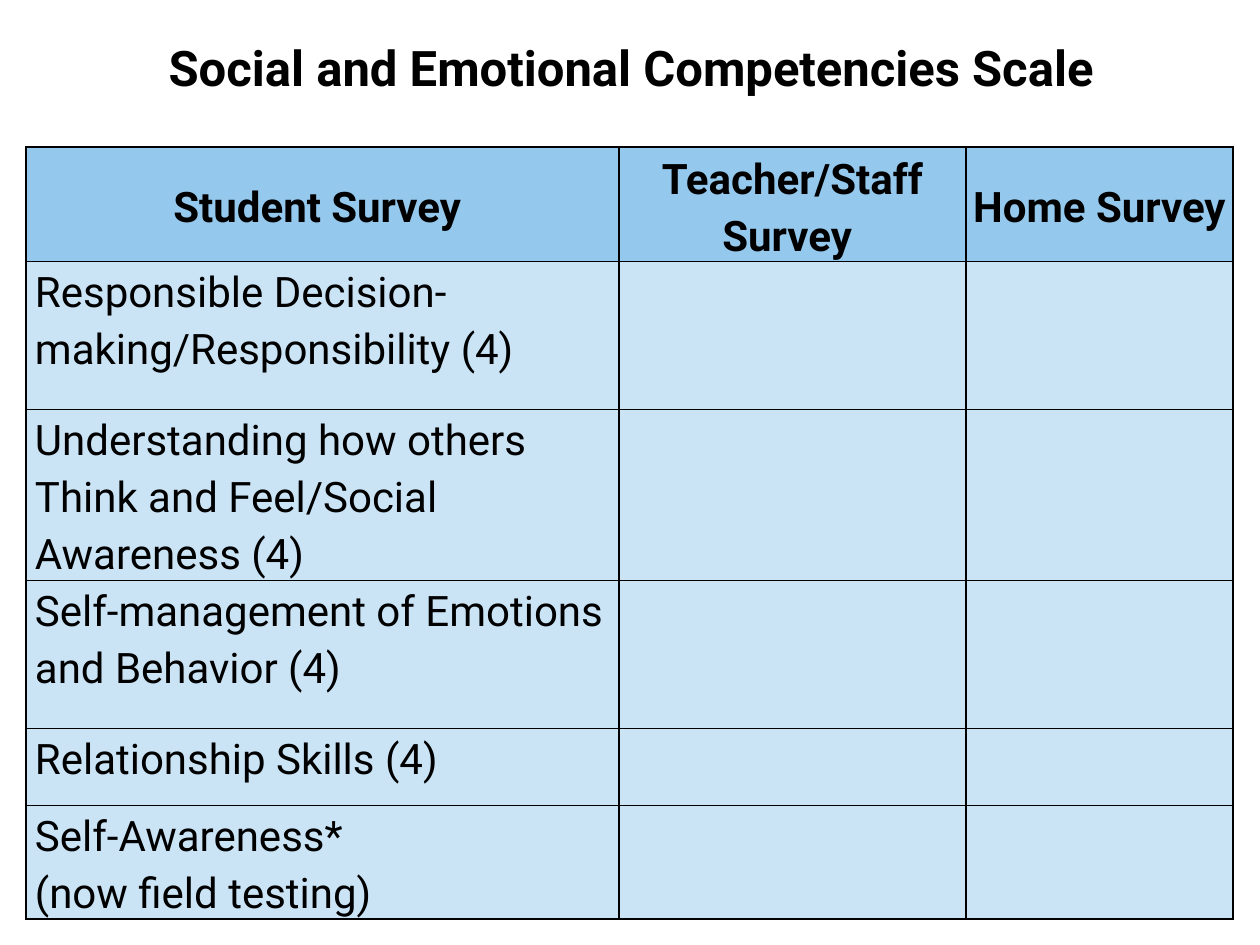
import pptx
import pptx.util
import pptx.dml.color
import pptx.enum.text
import pptx.oxml.ns
import lxml.etree

PX = 914400 // 126
COLORS = {"text": "000000", "border": "000000", "header": "94C8ED", "body": "CAE4F6"}
FONT = "Roboto"
ALIGN = pptx.enum.text.PP_ALIGN
ANCHOR = pptx.enum.text.MSO_ANCHOR

COLUMN_WIDTHS = [593, 347, 267]
ROW_HEIGHTS = [114, 148, 171, 148, 77, 113]
HEADERS = ["Student Survey ", "Teacher/Staff Survey ", "Home Survey "]
COMPETENCIES = [
    "Responsible Decision-making/Responsibility (4)",
    "Understanding how others Think and Feel/Social Awareness (4)",
    "Self-management of Emotions and Behavior (4)",
    "Relationship Skills (4)",
    "Self-Awareness*\n(now field testing)",
]
HEADER_CELL = {"margin_left": 4 * PX, "margin_right": 4 * PX, "margin_top": PX,
               "margin_bottom": 0, "vertical_anchor": ANCHOR.MIDDLE}
BODY_CELL = {"margin_left": 9 * PX, "margin_right": 9 * PX, "margin_top": 0,
             "margin_bottom": 0, "vertical_anchor": ANCHOR.TOP}
HEADER_PARA = {"alignment": ALIGN.CENTER, "line_spacing": 1.15,
               "space_after": pptx.util.Pt(10)}
BODY_PARA = {"alignment": ALIGN.LEFT, "line_spacing": 1.15}


def write(frame, text, size, bold, para_format):
    """Fill a text frame and format each of its paragraphs."""
    frame.text = text
    for para in frame.paragraphs:
        for name, value in para_format.items():
            setattr(para, name, value)
        for span in para.runs:
            span.font.name = FONT
            span.font.size = pptx.util.Pt(size)
            span.font.bold = bold
            span.font.color.rgb = pptx.dml.color.RGBColor.from_string(COLORS["text"])


def add_borders(cell):
    properties = cell._tc.get_or_add_tcPr()
    for side in ("lnL", "lnR", "lnT", "lnB"):
        line = lxml.etree.SubElement(
            properties, pptx.oxml.ns.qn("a:" + side), w=str(pptx.util.Pt(1)))
        fill = lxml.etree.SubElement(line, pptx.oxml.ns.qn("a:solidFill"))
        lxml.etree.SubElement(fill, pptx.oxml.ns.qn("a:srgbClr"), val=COLORS["border"])


deck = pptx.Presentation()
deck.slide_width = 1260 * PX
deck.slide_height = 945 * PX
page = deck.slides.add_slide(deck.slide_layouts[5])

title = page.shapes.title
title_place = {"left": 120, "top": 31, "width": 1022, "height": 72}
for name, value in title_place.items():
    setattr(title, name, value * PX)
title_format = {"word_wrap": False, "vertical_anchor": ANCHOR.MIDDLE,
                "auto_size": pptx.enum.text.MSO_AUTO_SIZE.NONE}
for name, value in title_format.items():
    setattr(title.text_frame, name, value)
write(title.text_frame, "Social and Emotional Competencies Scale", 28, True,
      {"alignment": ALIGN.CENTER})

rows = [HEADERS] + [[competency, "", ""] for competency in COMPETENCIES]
table = page.shapes.add_table(
    len(rows), len(HEADERS), 26 * PX, 147 * PX,
    sum(COLUMN_WIDTHS) * PX, sum(ROW_HEIGHTS) * PX).table
table.first_row = False
table.horz_banding = False
for column, width in zip(table.columns, COLUMN_WIDTHS):
    column.width = width * PX
for row, height in zip(table.rows, ROW_HEIGHTS):
    row.height = height * PX

for row_number, texts in enumerate(rows):
    is_header = row_number == 0
    cell_format = HEADER_CELL if is_header else BODY_CELL
    para_format = HEADER_PARA if is_header else BODY_PARA
    color = COLORS["header" if is_header else "body"]
    for column_number, text in enumerate(texts):
        cell = table.cell(row_number, column_number)
        for name, value in cell_format.items():
            setattr(cell, name, value)
        add_borders(cell)
        cell.fill.solid()
        cell.fill.fore_color.rgb = pptx.dml.color.RGBColor.from_string(color)
        if text:
            write(cell.text_frame, text, 24, is_header, para_format)

deck.save("out.pptx")
